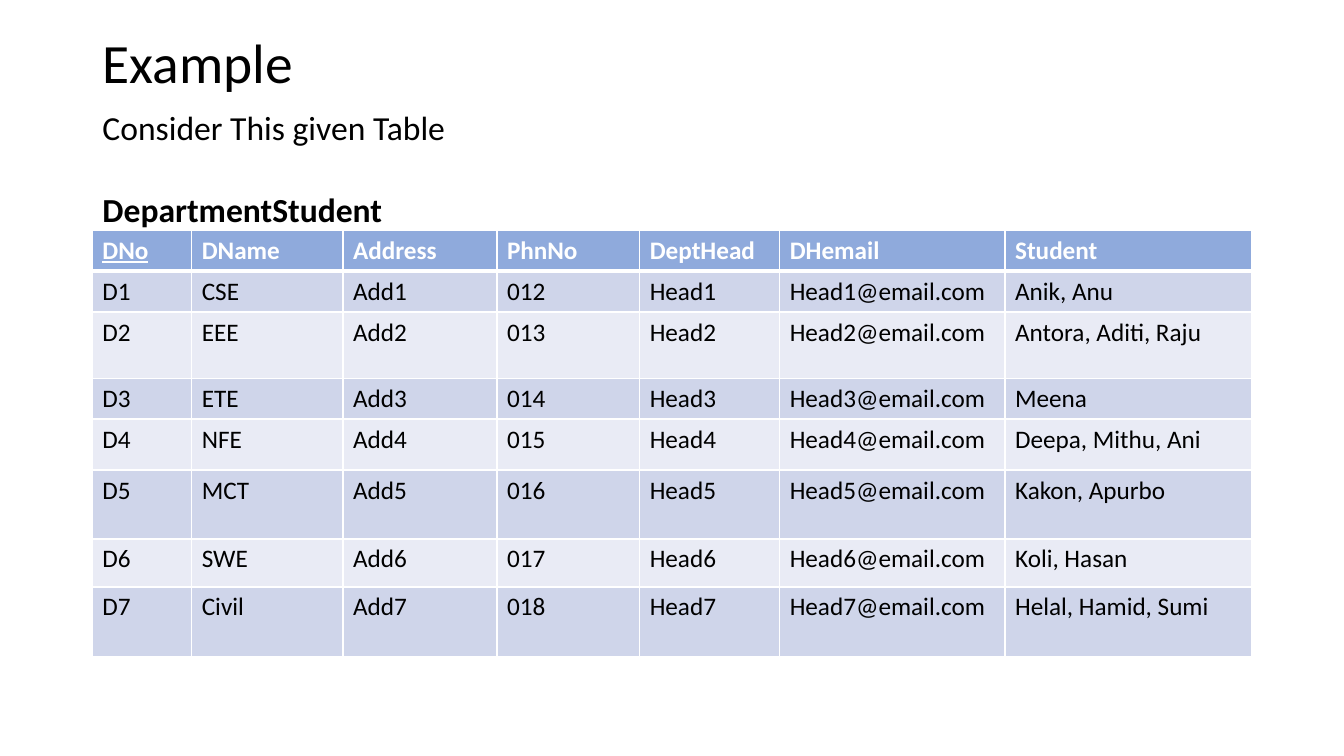
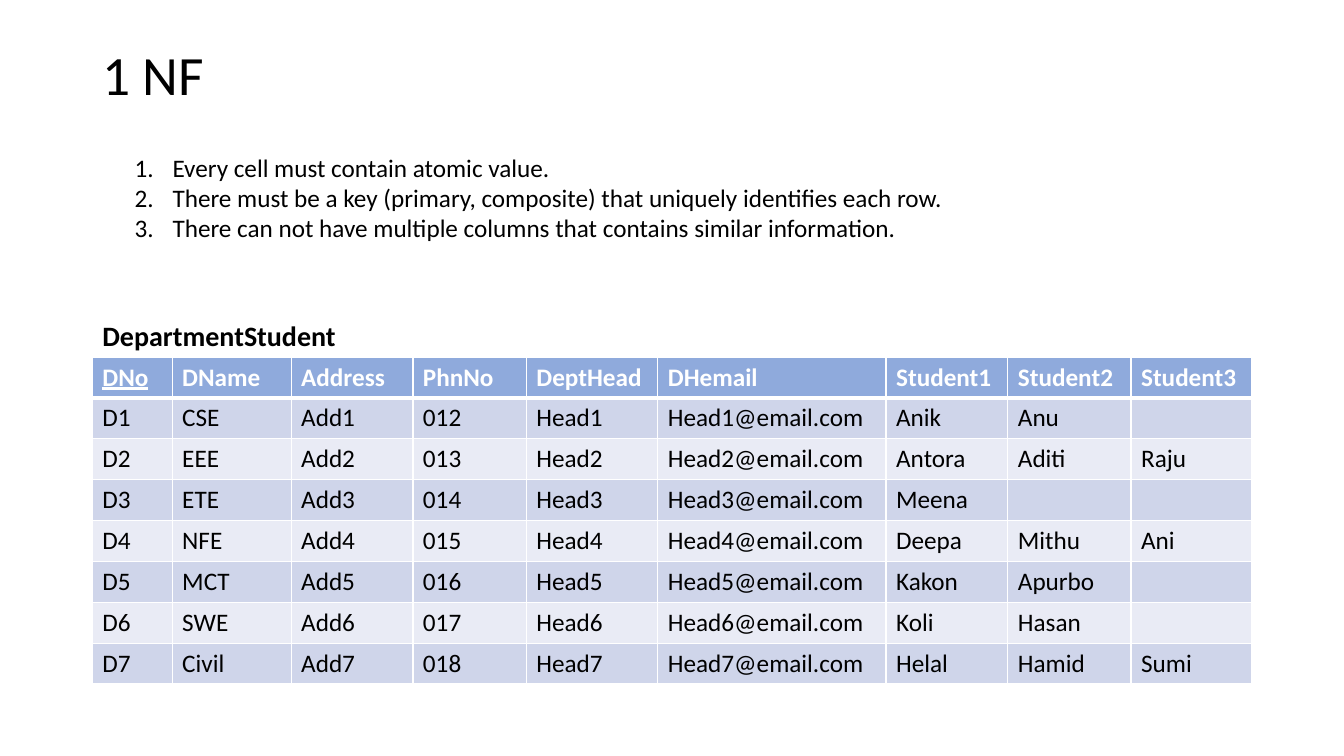
from lxml.etree import SubElement
from pptx import Presentation
from pptx.dml.color import RGBColor
from pptx.enum.text import MSO_ANCHOR, MSO_AUTO_SIZE, PP_ALIGN
from pptx.oxml.ns import qn
from pptx.util import Pt

# Shared style
FONT = "Calibri"
BLACK = RGBColor(0x00, 0x00, 0x00)
WHITE = RGBColor(0xFF, 0xFF, 0xFF)
HEADER = RGBColor(0x8F, 0xAA, 0xDC)
BANDS = (RGBColor(0xE9, 0xEB, 0xF5), RGBColor(0xCF, 0xD5, 0xEA))
LEFT, WIDTH = 66, 828
ROW = 29.2
INDENT = 27
CAPTION = "DepartmentStudent"

# Department data
FIELDS = ["DNo", "DName", "Address", "PhnNo", "DeptHead", "DHemail"]
DEPARTMENTS = [
    ("CSE", ["Anik", "Anu"]),
    ("EEE", ["Antora", "Aditi", "Raju"]),
    ("ETE", ["Meena"]),
    ("NFE", ["Deepa", "Mithu", "Ani"]),
    ("MCT", ["Kakon", "Apurbo"]),
    ("SWE", ["Koli", "Hasan"]),
    ("Civil", ["Helal", "Hamid", "Sumi"]),
]
RULES = [
    "Every cell must contain atomic value.",
    "There must be a key (primary, composite) that uniquely identifies each row.",
    "There can not have multiple columns that contains similar information.",
]


def department_rows(student_cells):
    """Department records, with students laid out by student_cells."""
    return [
        [f"D{i}", name, f"Add{i}", f"0{11 + i}", f"Head{i}",
         f"Head{i}@email.com", *student_cells(students)]
        for i, (name, students) in enumerate(DEPARTMENTS, 1)
    ]


def place(sp, box):
    sp.left, sp.top, sp.width, sp.height = (Pt(v) for v in box)


def add_run(p, text, size, color=BLACK, bold=False, underline=False):
    r = p.add_run()
    r.text = text
    r.font.name, r.font.size = FONT, Pt(size)
    r.font.color.rgb = color
    r.font.bold, r.font.underline = bold, underline


def add_title(slide, text, box):
    sp = slide.shapes.title
    place(sp, box)
    tf = sp.text_frame
    tf.vertical_anchor = MSO_ANCHOR.MIDDLE
    tf.auto_size = MSO_AUTO_SIZE.NONE
    p = tf.paragraphs[0]
    p.alignment, p.line_spacing = PP_ALIGN.LEFT, 0.9
    add_run(p, text, 39.6)


def add_body(slide, lines, box, size, gap=0, numbered=False):
    """Fill the body placeholder with (text, bold) lines."""
    sp = slide.placeholders[1]
    place(sp, box)
    tf = sp.text_frame
    tf.auto_size = MSO_AUTO_SIZE.NONE
    indent = Pt(INDENT) if numbered else 0
    for i, (text, bold) in enumerate(lines):
        p = tf.add_paragraph() if i else tf.paragraphs[0]
        p.space_before = Pt(gap if i else 0)
        pPr = p._p.get_or_add_pPr()
        pPr.set("marL", str(indent))
        pPr.set("indent", str(-indent))
        if numbered:
            SubElement(pPr, qn("a:buFont"), typeface=FONT)
            SubElement(pPr, qn("a:buAutoNum"), type="arabicPeriod")
        else:
            SubElement(pPr, qn("a:buNone"))
        add_run(p, text, size, bold=bold)


def add_caption(slide, text, box):
    tf = slide.shapes.add_textbox(*(Pt(v) for v in box)).text_frame
    tf.word_wrap = True
    add_run(tf.paragraphs[0], text, 20, bold=True)


def set_borders(cell, top, bottom):
    tcPr = cell._tc.get_or_add_tcPr()
    for side, width in (("L", 1), ("R", 1), ("T", top), ("B", bottom)):
        ln = SubElement(tcPr, qn(f"a:ln{side}"), w=str(Pt(width)))
        fill = SubElement(ln, qn("a:solidFill"))
        SubElement(fill, qn("a:srgbClr"), val=str(WHITE))


def add_department_table(slide, rows, top, widths, heights):
    frame = slide.shapes.add_table(
        len(rows), len(widths), Pt(LEFT), Pt(top), Pt(WIDTH), Pt(sum(heights)))
    table = frame.table
    for col, width in zip(table.columns, widths):
        col.width = Pt(width)
    for i, (row, height) in enumerate(zip(rows, heights)):
        table.rows[i].height = Pt(height)
        head = i == 0
        for j, text in enumerate(row):
            cell = table.cell(i, j)
            # A thick rule separates the header from the records
            set_borders(cell, 3 if i == 1 else 1, 3 if head else 1)
            cell.fill.solid()
            cell.fill.fore_color.rgb = HEADER if head else BANDS[i % 2]
            if text:
                add_run(cell.text_frame.paragraphs[0], text, 18,
                        WHITE if head else BLACK, head, head and j == 0)


def example_slide(prs):
    slide = prs.slides.add_slide(prs.slide_layouts[1])
    add_title(slide, "Example", (LEFT, 29, WIDTH, 36))
    add_body(slide, [("Consider This given Table", False), (CAPTION, True)],
             (LEFT, 73, 262, 94), 24, gap=29.2)
    rows = [FIELDS + ["Student"]]
    rows += department_rows(lambda names: [", ".join(names)])
    add_department_table(slide, rows, 164.5,
                         [71, 108, 110, 102, 100, 161, 176],
                         [ROW, ROW, 47.2, ROW, 36.5, 49.2, 34.3, 49.5])


def first_normal_form_slide(prs):
    slide = prs.slides.add_slide(prs.slide_layouts[1])
    add_title(slide, "1 NF", (LEFT, 29, WIDTH, 52.5))
    add_body(slide, [(rule, False) for rule in RULES],
             (89, 105, 620, 73), 18, numbered=True)
    add_caption(slide, CAPTION, (LEFT, 224, 221, 31.5))
    rows = [FIELDS + [f"Student{n}" for n in (1, 2, 3)]]
    rows += department_rows(lambda names: names + [""] * (3 - len(names)))
    add_department_table(slide, rows, 255,
                         [57, 85, 87, 81, 94, 163, 87, 88, 86],
                         [ROW] * len(rows))


def main():
    prs = Presentation()
    prs.slide_width, prs.slide_height = Pt(960), Pt(540)
    example_slide(prs)
    first_normal_form_slide(prs)
    prs.save("out.pptx")


if __name__ == "__main__":
    main()
